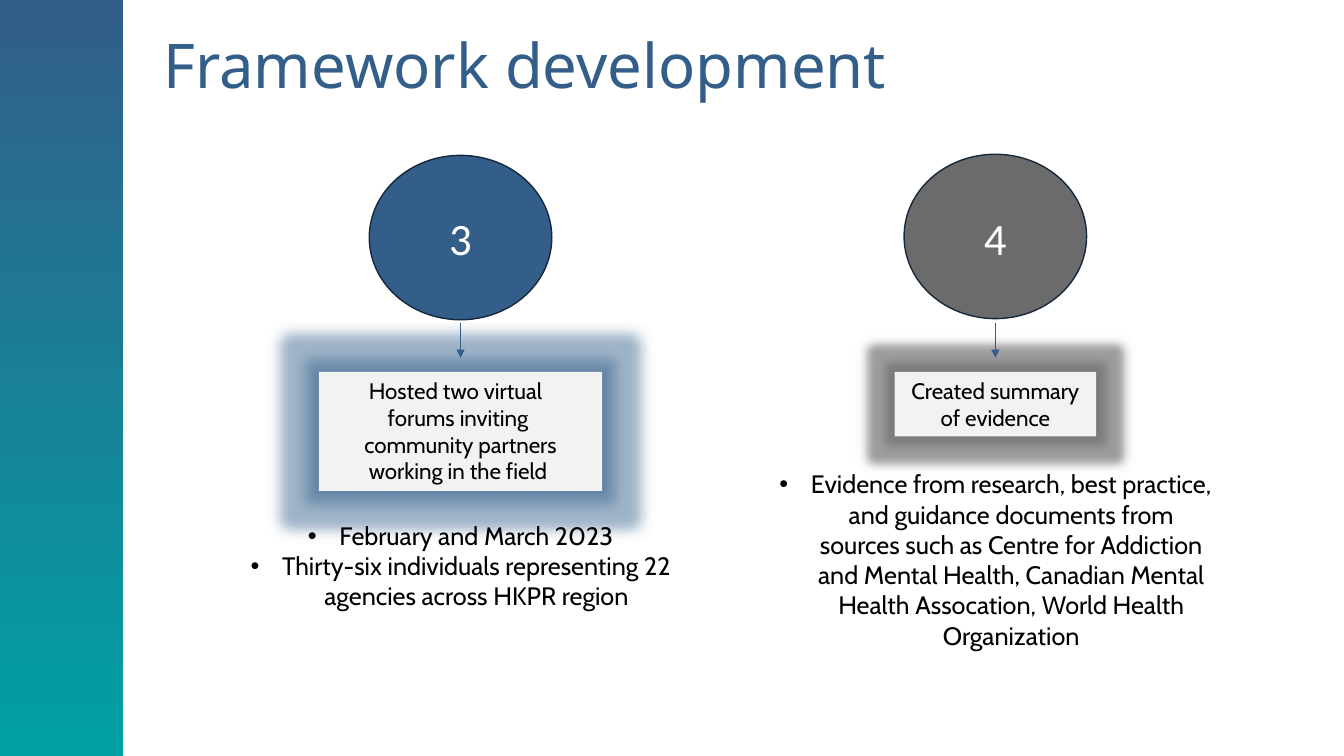
"""Build the slide on steps three and four of the framework development."""
from lxml.etree import SubElement
from pptx import Presentation
from pptx.dml.color import RGBColor
from pptx.enum.shapes import MSO_CONNECTOR, MSO_SHAPE
from pptx.enum.text import MSO_ANCHOR, MSO_AUTO_SIZE, PP_ALIGN
from pptx.oxml import parse_xml
from pptx.oxml.ns import nsdecls, qn
from pptx.util import Pt

COLORS = {
    "blue": "325E89",
    "teal": "00A1A3",
    "gray": "6B6B6B",
    "outline": "16293C",
    "panel": "F2F2F2",
    "black": "000000",
    "white": "FFFFFF",
}
STEPS = [
    {
        "number": "3", "center": 329, "color": "blue", "circle_top": 111,
        "box_width": 202.4, "box_height": 85, "glow": 18, "glow_alpha": 40,
        "summary": ["Hosted two virtual  ", "forums inviting ", "community partners working in the field "],
        "details_top": 368, "details_height": 72.7,
        "details": [
            "February and March 2023",
            "Thirty-six individuals representing 22 agencies across HKPR region",
        ],
    },
    {
        "number": "4", "center": 711, "color": "gray", "circle_top": 110.2,
        "box_width": 144, "box_height": 46, "glow": 13, "glow_alpha": 60,
        "summary": ["Created summary of evidence"],
        "details_top": 331.2, "details_height": 138.2,
        "details": [
            "Evidence from research, best practice, and guidance documents from sources such as "
            "Centre for Addiction and Mental Health, Canadian Mental Health Assocation, "
            "World Health Organization",
        ],
    },
]


def rgb(name):
    return RGBColor.from_string(COLORS[name])


def write_text(shape, lines, font_name, size, color, bulleted=False):
    frame = shape.text_frame
    frame.word_wrap = True
    frame.auto_size = MSO_AUTO_SIZE.NONE
    frame.vertical_anchor = MSO_ANCHOR.TOP
    for index, line in enumerate(lines):
        paragraph = frame.paragraphs[0] if index == 0 else frame.add_paragraph()
        paragraph.alignment = PP_ALIGN.CENTER
        if bulleted:
            properties = paragraph._p.get_or_add_pPr()
            properties.set("marL", str(Pt(22.5)))
            properties.set("indent", str(-Pt(22.5)))
            SubElement(properties, qn("a:buFont"), typeface="Arial")
            SubElement(properties, qn("a:buChar"), char="•")
        run = paragraph.add_run()
        run.text = line
        run.font.name = font_name
        run.font.size = Pt(size)
        run.font.color.rgb = rgb(color)


presentation = Presentation()
presentation.slide_width = Pt(960)
presentation.slide_height = Pt(540)
slide = presentation.slides.add_slide(presentation.slide_layouts[5])
shapes = slide.shapes

title = shapes.title
title.left, title.top, title.width, title.height = Pt(109.4), Pt(28.8), Pt(657.4), Pt(40.3)
title.text_frame.auto_size = MSO_AUTO_SIZE.NONE
title.text_frame.vertical_anchor = MSO_ANCHOR.MIDDLE
title_paragraph = title.text_frame.paragraphs[0]
title_paragraph.alignment = PP_ALIGN.LEFT
title_paragraph.line_spacing = 0.9
title_run = title_paragraph.add_run()
title_run.text = "Framework development"
title_run.font.name = "Noto Sans"
title_run.font.size = Pt(44)
title_run.font.color.rgb = rgb("blue")

sidebar = shapes.add_shape(MSO_SHAPE.RECTANGLE, 0, 0, Pt(88), Pt(540))
sidebar.shadow.inherit = False
sidebar.line.fill.background()
sidebar.fill.gradient()
sidebar.fill.gradient_angle = 270
for stop, color in zip(sidebar.fill.gradient_stops, ("blue", "teal")):
    stop.color.rgb = rgb(color)

for step in STEPS:
    center = step["center"]

    circle = shapes.add_shape(
        MSO_SHAPE.FLOWCHART_CONNECTOR, Pt(center - 65.2), Pt(step["circle_top"]), Pt(130.4), Pt(117.4))
    circle.shadow.inherit = False
    circle.fill.solid()
    circle.fill.fore_color.rgb = rgb(step["color"])
    circle.line.color.rgb = rgb(step["color"])
    circle.line.color.rgb = rgb("outline")
    circle.line.width = Pt(1)

    box = shapes.add_shape(
        MSO_SHAPE.RECTANGLE, Pt(center - step["box_width"] / 2), Pt(265.7),
        Pt(step["box_width"]), Pt(step["box_height"]))
    box.fill.solid()
    box.fill.fore_color.rgb = rgb("panel")
    box.line.fill.background()
    tint = COLORS[step["color"]]
    box._element.spPr.append(parse_xml(
        f'<a:effectLst {nsdecls("a")}>'
        f'<a:glow rad="{Pt(step["glow"])}"><a:srgbClr val="{tint}">'
        f'<a:alpha val="{step["glow_alpha"] * 1000}"/></a:srgbClr></a:glow>'
        f'<a:outerShdw blurRad="{Pt(5)}" sx="102000" sy="102000" algn="ctr" rotWithShape="0">'
        f'<a:srgbClr val="{tint}"><a:alpha val="40000"/></a:srgbClr></a:outerShdw>'
        '</a:effectLst>'))
    write_text(box, step["summary"], "Cabin", 16, "black")

    number = shapes.add_textbox(Pt(center - 31.3), Pt(146.9), Pt(62.6), Pt(46))
    write_text(number, [step["number"]], "Calibri", 32, "white")

    arrow = shapes.add_connector(MSO_CONNECTOR.STRAIGHT, Pt(center), Pt(230.6), Pt(center), Pt(255.6))
    arrow.line.color.rgb = rgb("blue")
    arrow.line.width = Pt(0.5)
    SubElement(arrow.line._get_or_add_ln(), qn("a:tailEnd"), type="triangle")
    SubElement(arrow._element.spPr, qn("a:effectLst"))

    details = shapes.add_textbox(
        Pt(center - 162.5), Pt(step["details_top"]), Pt(325), Pt(step["details_height"]))
    write_text(details, step["details"], "Cabin", 18, "black", bulleted=True)

presentation.save("out.pptx")
